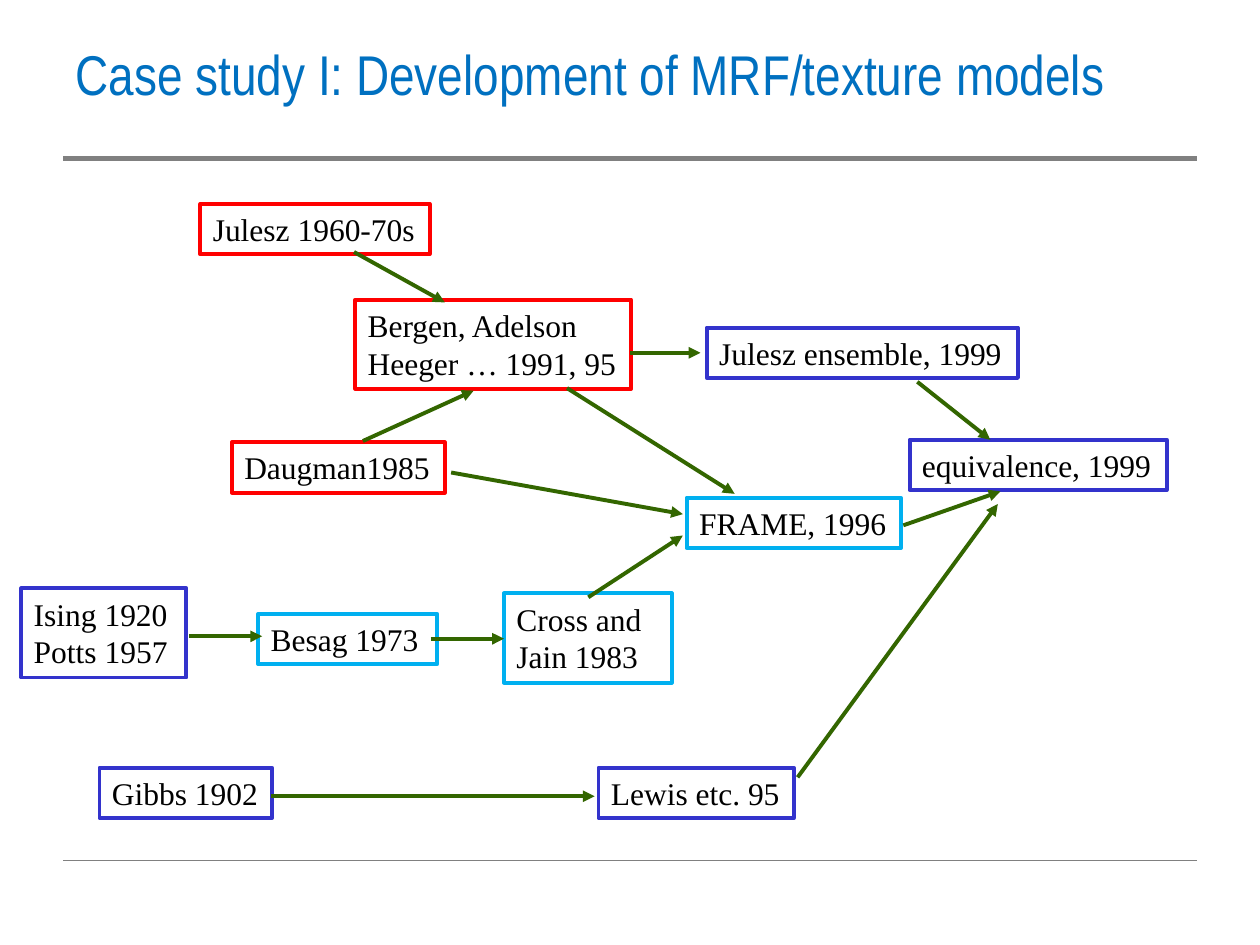
from lxml.etree import SubElement
from pptx import Presentation
from pptx.dml.color import RGBColor
from pptx.enum.shapes import MSO_CONNECTOR, MSO_SHAPE
from pptx.enum.text import MSO_ANCHOR, MSO_AUTO_SIZE, PP_ALIGN
from pptx.oxml.ns import qn
from pptx.util import Pt

TITLE_BLUE = RGBColor(0x00, 0x70, 0xC0)
RULE_GRAY = RGBColor(0x80, 0x80, 0x80)
RED = RGBColor(0xFF, 0x00, 0x00)
INDIGO = RGBColor(0x33, 0x33, 0xCC)
CYAN = RGBColor(0x00, 0xB0, 0xF0)
GREEN = RGBColor(0x33, 0x66, 0x00)
BLACK = RGBColor(0x00, 0x00, 0x00)

# Text, left, top, width, outline, wrap
WORKS = [
    ("Julesz 1960-70s", 114.5, 116.6, 131, RED, False),
    ("Daugman1985", 132.5, 252.7, 121.7, RED, False),
    ("Bergen, Adelson\nHeeger … 1991, 95", 203, 171.2, 157.7, RED, False),
    ("Julesz ensemble, 1999", 403.9, 187.2, 177.8, INDIGO, False),
    ("equivalence, 1999", 519.8, 251.3, 146.9, INDIGO, False),
    ("Gibbs 1902", 56.9, 438.7, 98.6, INDIGO, False),
    ("Lewis etc. 95", 342, 438.7, 111.6, INDIGO, False),
    ("Ising 1920\nPotts 1957", 12.2, 336.2, 94.3, INDIGO, False),
    ("Besag 1973", 147.6, 350.8, 102.2, CYAN, True),
    ("Cross and\nJain 1983", 288, 339.1, 95.8, CYAN, True),
    ("FRAME, 1996", 392.4, 284.4, 122.4, CYAN, False),
]

# Start x, start y, end x, end y
INFLUENCES = [
    (202.3, 144, 254.2, 172.8),    # Julesz to Bergen
    (207.4, 252, 270.7, 223.2),    # Daugman to Bergen
    (360, 201.6, 400.3, 201.6),    # Bergen to Julesz ensemble
    (324, 221.8, 419.8, 282.2),    # Bergen to FRAME
    (257.8, 270, 390.2, 293.8),    # Daugman to FRAME
    (336.2, 341.3, 390.2, 306),    # Cross and Jain to FRAME
    (108, 363.6, 149.8, 363.6),    # Ising to Besag
    (246.2, 365, 288, 365),        # Besag to Cross and Jain
    (154.8, 455, 339.8, 455),      # Gibbs to Lewis
    (516.2, 300.2, 571.7, 280.8),  # FRAME to equivalence
    (524.2, 218.2, 565.9, 251.3),  # Julesz ensemble to equivalence
    (455.8, 444.2, 570.2, 288),    # Lewis to equivalence
]


class TimelineSlide:
    title_font, title_size = "Arial Narrow", 32
    body_font, body_size = "Times New Roman", 18
    stroke = 2.25

    def __init__(self, slide):
        self.slide = slide

    def format_text(self, frame, font, size, color):
        for paragraph in frame.paragraphs:
            paragraph.alignment = PP_ALIGN.LEFT
            for run in paragraph.runs:
                run.font.name = font
                run.font.size = Pt(size)
                run.font.color.rgb = color

    def title(self, text, left, top, width, height):
        heading = self.slide.shapes.title
        heading.left, heading.top = Pt(left), Pt(top)
        heading.width, heading.height = Pt(width), Pt(height)
        frame = heading.text_frame
        frame.text = text
        frame.auto_size = MSO_AUTO_SIZE.NONE
        frame.vertical_anchor = MSO_ANCHOR.MIDDLE
        self.format_text(frame, self.title_font, self.title_size, TITLE_BLUE)

    def work(self, text, left, top, width, color, wrap):
        height = 6.6 + 22.2 * len(text.splitlines())
        box = self.slide.shapes.add_shape(
            MSO_SHAPE.RECTANGLE, Pt(left), Pt(top), Pt(width), Pt(height))
        box.shadow.inherit = False
        box.fill.background()
        box.line.color.rgb = color
        box.line.width = Pt(self.stroke)
        frame = box.text_frame
        frame.text = text
        frame.word_wrap = wrap
        frame.auto_size = MSO_AUTO_SIZE.SHAPE_TO_FIT_TEXT
        frame.vertical_anchor = MSO_ANCHOR.TOP
        self.format_text(frame, self.body_font, self.body_size, BLACK)

    def line(self, x1, y1, x2, y2, color, width):
        connector = self.slide.shapes.add_connector(
            MSO_CONNECTOR.STRAIGHT, Pt(x1), Pt(y1), Pt(x2), Pt(y2))
        connector.line.color.rgb = color
        connector.line.width = Pt(width)
        SubElement(connector._element.spPr, qn("a:effectLst"))
        return connector

    def arrow(self, x1, y1, x2, y2):
        connector = self.line(x1, y1, x2, y2, GREEN, self.stroke)
        SubElement(connector.line._get_or_add_ln(), qn("a:tailEnd"), type="triangle")


def main():
    deck = Presentation()
    deck.slide_width, deck.slide_height = Pt(720), Pt(540)
    timeline = TimelineSlide(deck.slides.add_slide(deck.slide_layouts[5]))

    # Title and the rules that frame the content
    timeline.title("Case study I: Development of MRF/texture models", 36, 18, 648, 48)
    timeline.line(36, 90.7, 684, 90.7, RULE_GRAY, 3)
    timeline.line(36, 491.8, 684, 491.8, RULE_GRAY, 0.75)

    # Works and the influences between them
    for work in WORKS:
        timeline.work(*work)
    for influence in INFLUENCES:
        timeline.arrow(*influence)

    deck.save("out.pptx")


if __name__ == "__main__":
    main()
